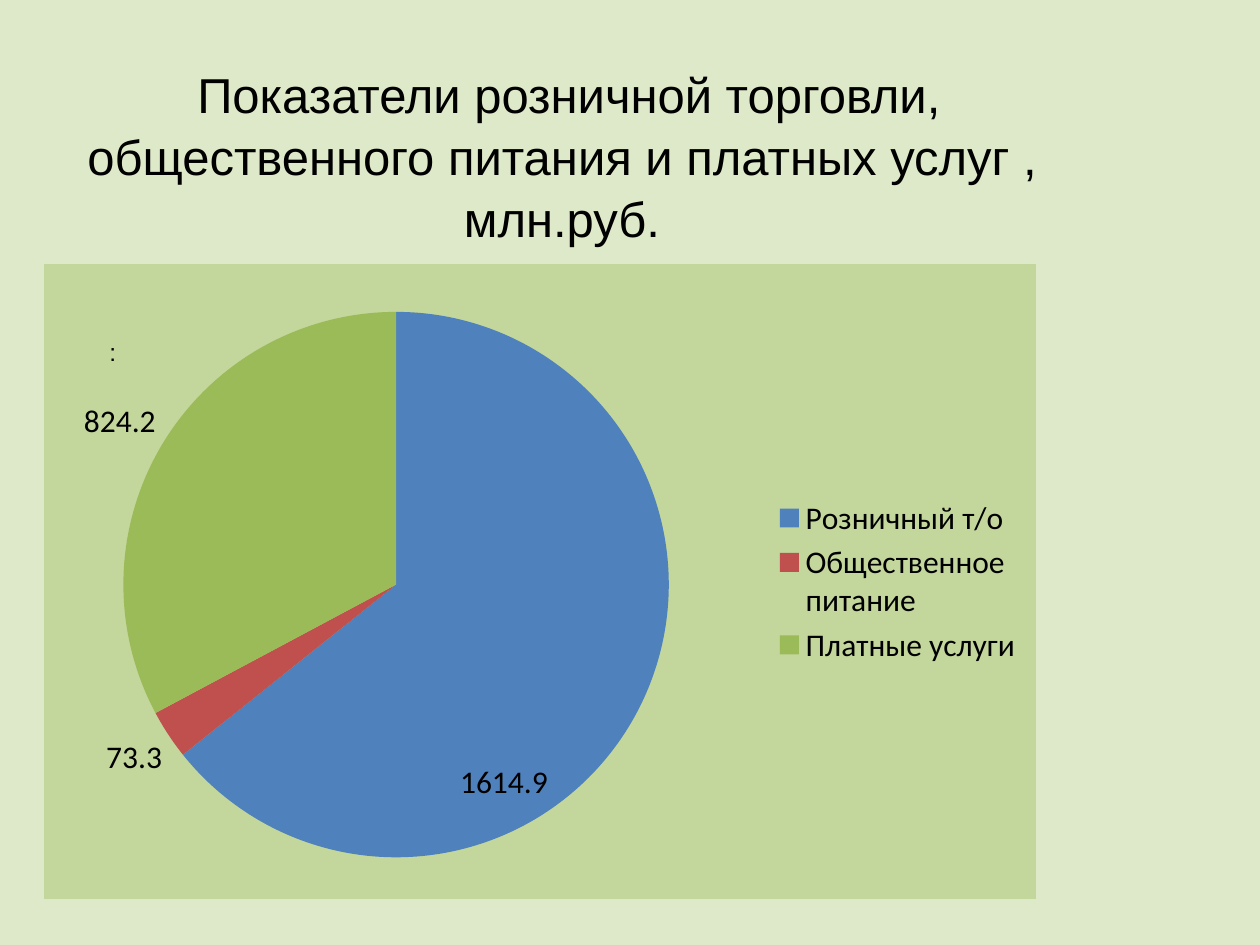
import pptx
import pptx.chart.data
import pptx.dml.color
import pptx.enum.chart
import pptx.enum.text
import pptx.oxml
import pptx.oxml.ns
import pptx.util

RGBColor = pptx.dml.color.RGBColor
BLACK = RGBColor(0x00, 0x00, 0x00)
PAGE_GREEN = RGBColor(0xDE, 0xE9, 0xC9)
CHART_GREEN = RGBColor(0xC3, 0xD6, 0x9B)
SLICE_COLORS = [
    RGBColor(0x4F, 0x81, 0xBD),
    RGBColor(0xC0, 0x50, 0x4D),
    RGBColor(0x9B, 0xBB, 0x59),
]
EMU_PER_PX = 914400 / 126


def px(length):
    return pptx.util.Emu(round(length * EMU_PER_PX))


def manual_layout(inner=False, **values):
    """Return a c:layout element with the given fractions of the chart."""
    tags = '<c:layoutTarget val="inner"/>' if inner else ""
    if inner:
        tags += '<c:xMode val="edge"/><c:yMode val="edge"/>'
    tags += "".join(f'<c:{name} val="{value}"/>' for name, value in values.items())
    return pptx.oxml.parse_xml(
        f'<c:layout {pptx.oxml.ns.nsdecls("c")}>'
        f"<c:manualLayout>{tags}</c:manualLayout></c:layout>"
    )


class SlideBuilder:
    text_font = "Arial"
    chart_font = "Calibri"

    def __init__(self, deck):
        self.page = deck.slides.add_slide(deck.slide_layouts[6])

    def background(self, color):
        fill = self.page.background.fill
        fill.solid()
        fill.fore_color.rgb = color

    def text(self, area, words, size, align, anchor, indent=0, spacing=1.0):
        box = self.page.shapes.add_textbox(*map(px, area))
        frame = box.text_frame
        frame.word_wrap = True
        frame.vertical_anchor = anchor
        para = frame.paragraphs[0]
        para.text = words
        para.alignment = align
        para.line_spacing = spacing
        para.font.name = self.text_font
        para.font.size = pptx.util.Pt(size)
        para.font.color.rgb = BLACK
        if indent:
            para._p.get_or_add_pPr().set("indent", str(px(indent)))

    def pie(self, area, series_name, values, colors, size):
        data = pptx.chart.data.CategoryChartData()
        data.categories = list(values)
        data.add_series(series_name, list(values.values()))
        chart = self.page.shapes.add_chart(
            pptx.enum.chart.XL_CHART_TYPE.PIE, *map(px, area), data
        ).chart
        chart.has_title = False
        chart.font.name = self.chart_font
        chart.font.size = pptx.util.Pt(size)
        chart.font.color.rgb = BLACK

        # Legend
        chart.has_legend = True
        chart.legend.position = pptx.enum.chart.XL_LEGEND_POSITION.RIGHT
        chart.legend.include_in_layout = False

        # Slices and their labels
        plot = chart.plots[0]
        plot.vary_by_categories = True
        series = plot.series[0]
        for index, color in enumerate(colors):
            fill = series.points[index].format.fill
            fill.solid()
            fill.fore_color.rgb = color
        labels = series.data_labels
        labels.show_value = True
        labels.show_percentage = False
        labels.position = pptx.enum.chart.XL_LABEL_POSITION.OUTSIDE_END

        # The largest slice carries its label inside
        label = series.points[0].data_label
        label.position = pptx.enum.chart.XL_LABEL_POSITION.OUTSIDE_END
        entry = labels._element.find(pptx.oxml.ns.qn("c:dLbl"))
        for flag, shown in (("c:showVal", "1"), ("c:showPercent", "0"),
                            ("c:showCatName", "0"), ("c:showLegendKey", "0")):
            entry.find(pptx.oxml.ns.qn(flag)).set("val", shown)
        entry.insert(1, manual_layout(x=-0.19, y=0.09))

        # Plot area placement and chart background
        space = chart._chartSpace
        plot_area = space.chart.plotArea
        for old in plot_area.findall(pptx.oxml.ns.qn("c:layout")):
            plot_area.remove(old)
        plot_area.insert(0, manual_layout(True, x=0.08, y=0.07, w=0.55, h=0.87))
        shape_style = pptx.oxml.parse_xml(
            f'<c:spPr {pptx.oxml.ns.nsdecls("c", "a")}><a:solidFill>'
            f'<a:srgbClr val="{CHART_GREEN}"/></a:solidFill>'
            "<a:ln><a:noFill/></a:ln></c:spPr>"
        )
        space.chart.addnext(shape_style)


def main():
    deck = pptx.Presentation()
    deck.slide_width, deck.slide_height = px(1260), px(945)
    slide = SlideBuilder(deck)
    align = pptx.enum.text.PP_ALIGN
    anchor = pptx.enum.text.MSO_ANCHOR

    slide.background(PAGE_GREEN)

    # Title
    slide.text(
        (63, 44, 998, 221),
        " Показатели розничной торговли, общественного питания "
        "и платных услуг , млн.руб.",
        28, align.CENTER, anchor.MIDDLE, spacing=1.05,
    )

    # Turnover chart
    slide.pie(
        (44, 264, 992, 635),
        "Series 1",
        {"Розничный т/о": 1614.9, "Общественное питание": 73.3,
         "Платные услуги": 824.2},
        SLICE_COLORS, 18,
    )

    # Note over the chart
    slide.text((35, 331, 1181, 81), ":", 14, align.LEFT, anchor.TOP, indent=62)

    deck.save("out.pptx")


if __name__ == "__main__":
    main()
